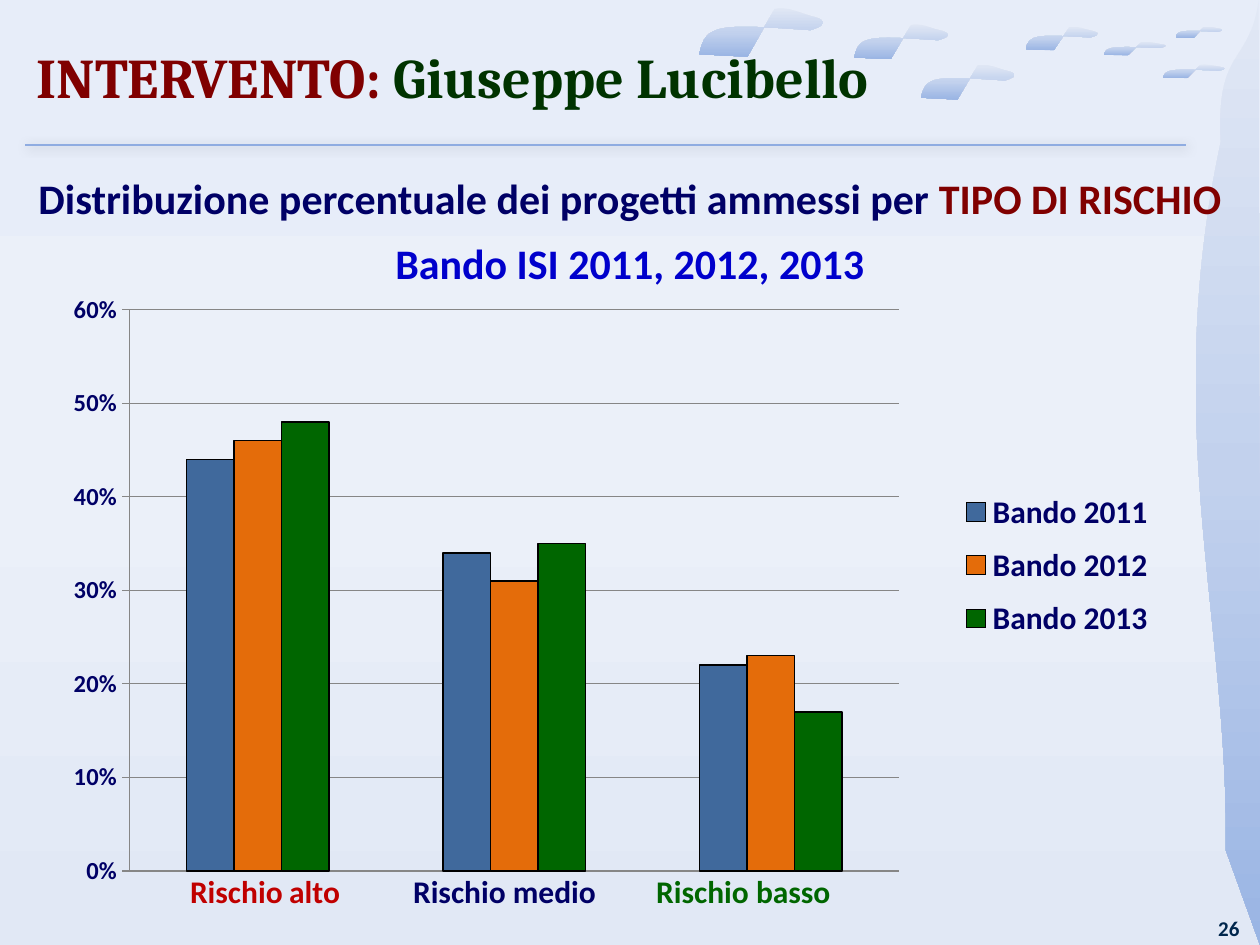
"""Build the slide on admitted projects by type of risk."""
from copy import deepcopy

from lxml import etree
from pptx import Presentation
from pptx.chart.data import CategoryChartData
from pptx.dml.color import RGBColor
from pptx.enum.chart import XL_CHART_TYPE, XL_LEGEND_POSITION, XL_TICK_MARK
from pptx.enum.shapes import MSO_CONNECTOR
from pptx.enum.text import MSO_ANCHOR, MSO_AUTO_SIZE, PP_ALIGN
from pptx.oxml import parse_xml
from pptx.oxml.ns import nsdecls, qn
from pptx.util import Inches, Pt

COLORS = {
    "navy": "000066", "maroon": "800000", "blue": "0000CC", "red": "C00000",
    "green": "006600", "forest": "003300", "number": "00264C", "rule": "8FACE1",
    "steel": "40699C", "orange": "E46C0A", "black": "000000", "grid": "868686",
}
BACKGROUND = ("E7EDF9", "EBF0F9", "E1E8F5")
DECORATION = ("E1E8F5", "C2D1ED", "9AB5E4")

RIBBON = [
    ("moveTo", [(0.39, 0.15)]),
    ("cubicBezTo", [(0.31, 0.05), (0.84, 0.07), (0.98, 0)]),
    ("lnTo", [(1, 1)]),
    ("lnTo", [(0.47, 0.9)]),
    ("cubicBezTo", [(0.51, 0.65), (-0.55, 0.45), (0.39, 0.15)]),
]
PETAL = [
    ("moveTo", [(0.9, 0.46)]),
    ("cubicBezTo", [(1.07, 0.33), (1, 0.23), (0.91, 0.18)]),
    ("cubicBezTo", [(0.83, 0.13), (0.69, -0.05), (0.61, 0.03)]),
    ("lnTo", [(0.39, 1)]),
    ("lnTo", [(0, 0.95)]),
    ("cubicBezTo", [(0.05, 0.33), (0.15, 0.33), (0.9, 0.46)]),
]
PETAL_PLACES = [
    (5.55, 0.06, 0.98, 0.39), (6.78, 0.19, 0.74, 0.28), (8.14, 0.21, 0.57, 0.19),
    (9.33, 0.21, 0.37, 0.09), (9.23, 0.51, 0.49, 0.11), (8.76, 0.33, 0.49, 0.11),
    (7.31, 0.51, 0.74, 0.28),
]
SERIES = [
    ("Bando 2011", (0.44, 0.34, 0.22), "steel"),
    ("Bando 2012", (0.46, 0.31, 0.23), "orange"),
    ("Bando 2013", (0.48, 0.35, 0.17), "green"),
]
RISK_LABELS = [
    (1.41, 1.42, [("Rischio", 18, "red", True), (" ", 16, "red", False), ("alto", 18, "red", True)]),
    (3.18, 1.65, [("Rischio medio", 18, "navy", True)]),
    (5.11, 1.65, [("Rischio basso", 18, "green", True)]),
]


def manual_layout(left, top, width, height, target=""):
    """Make a chart layout from fractions of the chart area."""
    places = "".join(f'<c:{tag} val="{value}"/>' for tag, value in (
        ("xMode", "edge"), ("yMode", "edge"),
        ("x", left), ("y", top), ("w", width), ("h", height)))
    return parse_xml(f'<c:layout {nsdecls("c")}><c:manualLayout>{target}{places}'
                     '</c:manualLayout></c:layout>')


class SlidePainter:
    """Hold the style and the current slide."""

    def __init__(self, page, font="Calibri"):
        self.page = page
        self.font = font

    def color(self, name):
        """Look up a named colour."""
        return RGBColor.from_string(COLORS[name])

    def style(self, font, size, color, bold=True, family=None):
        """Format one font."""
        font.name = family or self.font
        font.size = Pt(size)
        font.bold = bold
        font.color.rgb = self.color(color)

    def gradient(self, fill, element, colors):
        """Apply a three-stop gradient running downwards."""
        fill.gradient()
        fill.gradient_angle = 270
        stops = next(element.iter(qn("a:gsLst")))
        stops.insert(1, deepcopy(stops[0]))
        for stop, position, color in zip(fill.gradient_stops, (0, 0.5, 1), colors):
            stop.position = position
            stop.color.rgb = RGBColor.from_string(color)

    def background(self, colors):
        """Fill the slide background."""
        self.gradient(self.page.background.fill, self.page.element, colors)

    def freeform(self, segments, left, top, width, height):
        """Draw a closed curved outline inside its frame."""
        left, top, width, height = map(Inches, (left, top, width, height))
        builder = self.page.shapes.build_freeform(left, top)
        builder.add_line_segments(
            [(left + width, top), (left + width, top + height), (left, top + height)], close=True)
        shape = builder.convert_to_shape()
        curve = next(shape.element.iter(qn("a:path")))
        for child in list(curve):
            curve.remove(child)
        for kind, points in segments:
            segment = etree.SubElement(curve, qn(f"a:{kind}"))
            for x, y in points:
                etree.SubElement(segment, qn("a:pt"), x=str(round(x * width)), y=str(round(y * height)))
        etree.SubElement(curve, qn("a:close"))
        shape.shadow.inherit = False
        shape.line.fill.background()
        self.gradient(shape.fill, shape.element, DECORATION)

    def rule(self, left, right, top):
        """Draw the softly shadowed line under the title."""
        line = self.page.shapes.add_connector(
            MSO_CONNECTOR.STRAIGHT, Inches(left), Inches(top), Inches(right), Inches(top))
        line.line.color.rgb = self.color("rule")
        line.line.width = Pt(1.25)
        effects = etree.SubElement(line.element.spPr, qn("a:effectLst"))
        shadow = etree.SubElement(effects, qn("a:outerShdw"), blurRad=str(Pt(6)),
                                  dist=str(Pt(1)), dir="2700000", rotWithShape="0")
        shade = etree.SubElement(shadow, qn("a:srgbClr"), val=COLORS["black"])
        etree.SubElement(shade, qn("a:alpha"), val="20000")

    def spans(self, paragraph, parts, family=None):
        """Write formatted runs into a paragraph."""
        for text, size, color, bold in parts:
            span = paragraph.add_run()
            span.text = text
            self.style(span.font, size, color, bold, family)

    def text(self, left, top, width, height, lines, align=PP_ALIGN.LEFT, spacing=None):
        """Add a text box with one paragraph per line."""
        box = self.page.shapes.add_textbox(Inches(left), Inches(top), Inches(width), Inches(height))
        frame = box.text_frame
        frame.word_wrap = True
        frame.auto_size = MSO_AUTO_SIZE.SHAPE_TO_FIT_TEXT
        for index, parts in enumerate(lines):
            paragraph = frame.add_paragraph() if index else frame.paragraphs[0]
            paragraph.alignment = align
            paragraph.line_spacing = spacing
            self.spans(paragraph, parts)

    def title(self, left, top, width, height, parts):
        """Place the title in front of everything else."""
        title = self.page.shapes.title
        title.left, title.top, title.width, title.height = map(Inches, (left, top, width, height))
        title.text_frame.vertical_anchor = MSO_ANCHOR.MIDDLE
        paragraph = title.text_frame.paragraphs[0]
        paragraph.alignment = PP_ALIGN.LEFT
        self.spans(paragraph, parts, "Cambria")
        title.element.getparent().append(title.element)

    def chart(self, left, top, width, height):
        """Add the clustered columns."""
        data = CategoryChartData(number_format="0%")
        data.categories = ["1", "2", "3"]
        for name, values, _ in SERIES:
            data.add_series(name, values)
        chart = self.page.shapes.add_chart(
            XL_CHART_TYPE.COLUMN_CLUSTERED, Inches(left), Inches(top),
            Inches(width), Inches(height), data).chart
        self.style(chart.font, 10, "black", False)
        chart.has_title = False
        chart.has_legend = True
        chart.legend.position = XL_LEGEND_POSITION.RIGHT
        chart.legend.include_in_layout = False
        self.style(chart.legend.font, 18, "navy")
        chart.category_axis.visible = False
        axis = chart.value_axis
        axis.minimum_scale, axis.maximum_scale, axis.major_unit = 0, 0.6, 0.1
        axis.major_tick_mark = XL_TICK_MARK.OUTSIDE
        axis.tick_labels.number_format = "0%"
        axis.tick_labels.number_format_is_linked = False
        self.style(axis.tick_labels.font, 14, "navy")
        for line in (axis.format.line, axis.major_gridlines.format.line):
            line.color.rgb = self.color("grid")
            line.width = Pt(0.75)
        plot = chart.plots[0]
        plot.gap_width, plot.overlap, plot.vary_by_categories = 240, 0, False
        for series, (_, _, color) in zip(plot.series, SERIES):
            series.format.fill.solid()
            series.format.fill.fore_color.rgb = self.color(color)
            series.format.line.color.rgb = self.color("black")
            series.format.line.width = Pt(0.75)
        area = next(chart.element.iter(qn("c:plotArea")))
        legend = next(chart.element.iter(qn("c:legend")))
        for part in (area, legend):
            for old in part.findall(qn("c:layout")):
                part.remove(old)
        area.insert(0, manual_layout(0.08, 0.03, 0.68, 0.9, '<c:layoutTarget val="inner"/>'))
        legend.insert(1, manual_layout(0.81, 0.3, 0.18, 0.28))


def main():
    """Build and save the deck."""
    deck = Presentation()
    deck.slide_width, deck.slide_height = Inches(10), Inches(7.5)
    painter = SlidePainter(deck.slides.add_slide(deck.slide_layouts[5]))
    painter.background(BACKGROUND)
    painter.freeform(RIBBON, 9.49, 0, 0.51, 7.5)
    for place in PETAL_PLACES:
        painter.freeform(PETAL, *place)
    painter.text(9.57, 7.22, 0.47, 0.3, [[("26", 12, "number", True)]])
    painter.rule(0.2, 9.41, 1.15)
    painter.chart(0.31, 2.31, 8.98, 4.95)
    painter.text(0, 1.2, 10, 1.15, [
        [("Distribuzione percentuale dei progetti ammessi per ", 24, "navy", True),
         ("TIPO DI RISCHIO", 24, "maroon", True)],
        [("Bando ISI 2011, 2012, 2013", 24, "blue", True)],
    ], PP_ALIGN.CENTER, 1.3)
    for left, width, parts in RISK_LABELS:
        painter.text(left, 6.87, width, 0.4, [parts])
    painter.title(0.19, 0.14, 9.69, 0.93, [
        ("INTERVENTO: ", 32, "maroon", True), ("Giuseppe Lucibello", 32, "forest", True)])
    deck.save("out.pptx")


if __name__ == "__main__":
    main()
